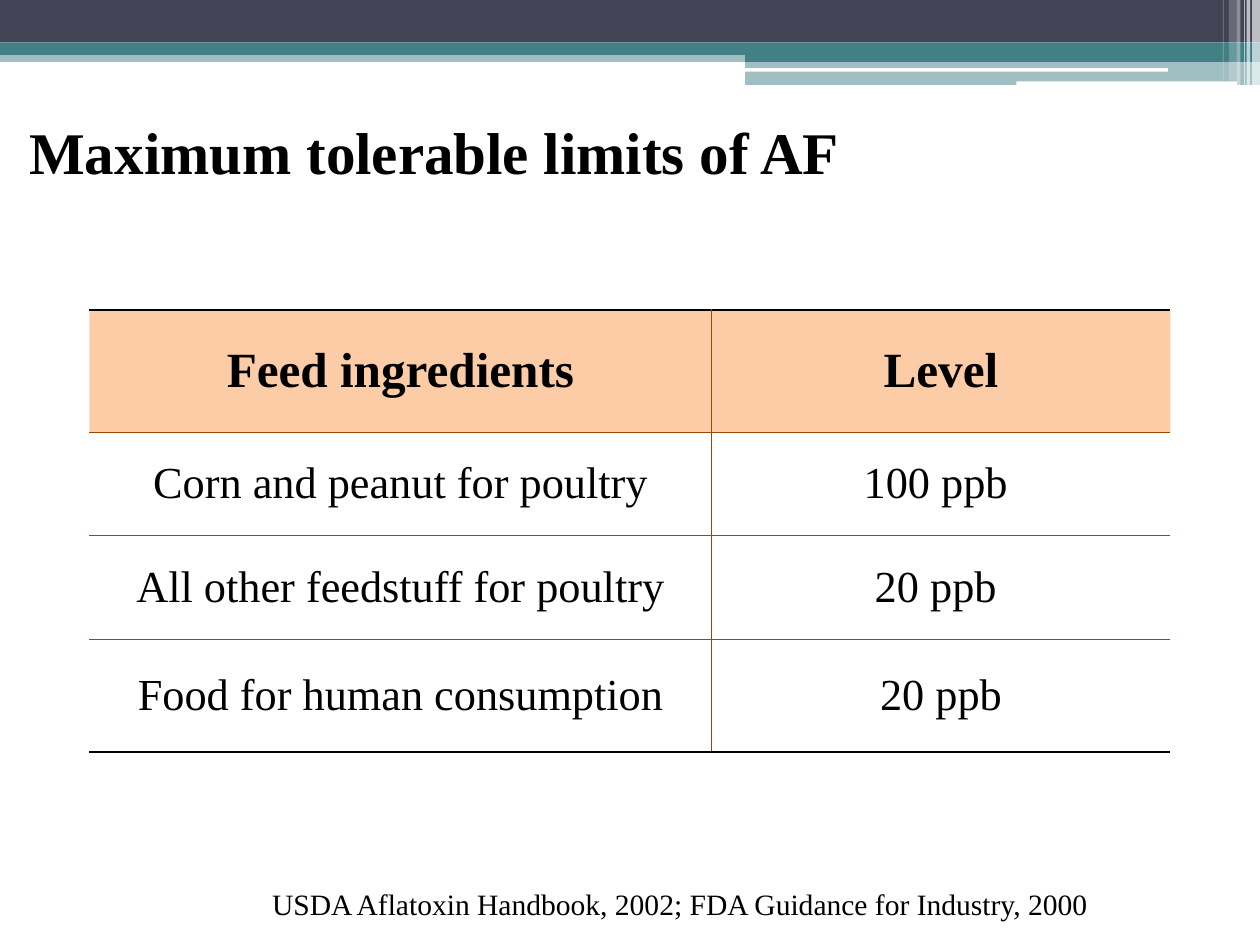
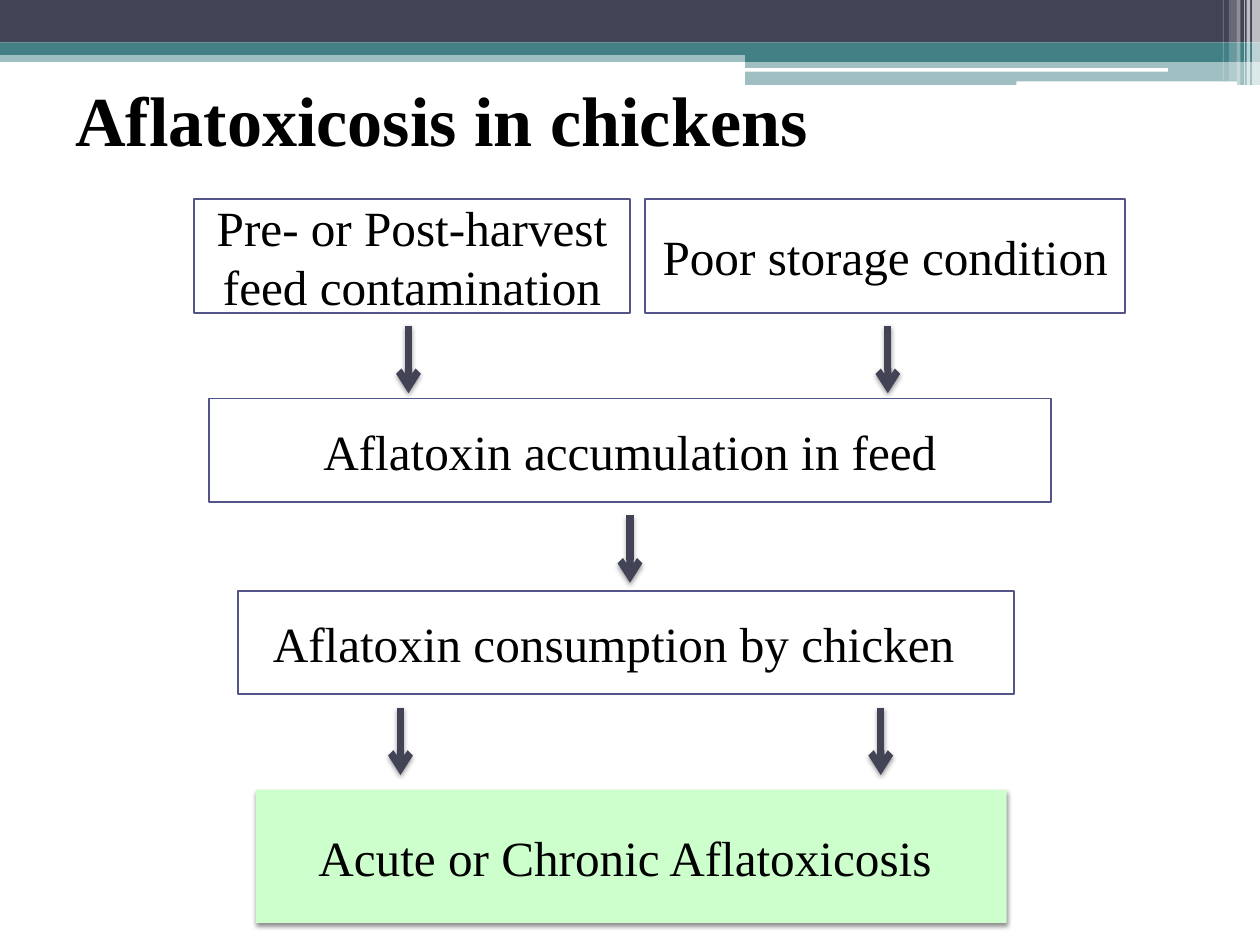
import pptx
import pptx.util
import pptx.dml.color
import pptx.enum.shapes
import pptx.enum.text
import pptx.oxml.ns
import lxml.etree

Inches = pptx.util.Inches
Pt = pptx.util.Pt
RGBColor = pptx.dml.color.RGBColor
Shape = pptx.enum.shapes.MSO_SHAPE
Align = pptx.enum.text.PP_ALIGN
qn = pptx.oxml.ns.qn

WIDTH, HEIGHT = 14.22, 10.67
FONT = "Times New Roman"
BLACK = RGBColor(0x00, 0x00, 0x00)
WHITE = RGBColor(0xFF, 0xFF, 0xFF)
SLATE = RGBColor(0x42, 0x44, 0x56)
TEAL = RGBColor(0x43, 0x80, 0x86)
INDIGO = RGBColor(0x53, 0x54, 0x8A)
MINT = RGBColor(0xCC, 0xFF, 0xCC)
PEACH = RGBColor(0xFA, 0xC0, 0x90)
BROWN = RGBColor(0x98, 0x48, 0x07)

SPLIT = 8.41
BANDS = [
    (0, 0.57, WIDTH, 0.13, TEAL, 50),
    (0, 0, WIDTH, 0.48, SLATE, 100),
    (0, 0.48, WIDTH, 0.14, TEAL, 100),
    (SPLIT, 0.56, WIDTH - SPLIT, 0.14, TEAL, 100),
    (SPLIT, 0.68, WIDTH - SPLIT, 0.28, TEAL, 50),
    (SPLIT, 0.77, 4.77, 0.04, WHITE, 100),
    (11.47, 0.92, 2.49, 0.06, WHITE, 100),
]
STRIPES = [
    (14.13, 0.09, 0.97, 65), (14.07, 0.04, 0.97, 65), (14.04, 0.01, 0.97, 60),
    (13.96, 0.04, 0.97, 40), (13.87, 0.09, 0.91, 20), (13.8, 0.01, 0.91, 30),
]
BANDS += [(left, 0, width, height, WHITE, opacity)
          for left, width, height, opacity in STRIPES]

LIMITS = [
    ("Feed ingredients", "Level"),
    ("Corn and peanut for poultry", "100 ppb"),
    ("All other feedstuff for poultry", "20 ppb"),
    ("Food for human consumption", "20 ppb"),
]
COLUMN_WIDTHS = [7.02, 5.18]
ROW_HEIGHTS = [1.38, 1.17, 1.17, 1.27]
LEVEL_SHIFTS = [0, 0.12, 0.12, 0]
SOURCES = "USDA Aflatoxin Handbook, 2002; FDA Guidance for Industry, 2000"

STAGES = [
    {"top": 2.25, "height": 1.28, "arrows": [4.61, 10.02],
     "boxes": [("Pre- or Post-harvest feed contamination", 2.19, 4.92, 0),
               ("Poor storage condition", 7.28, 5.42, 0)]},
    {"top": 4.5, "height": 1.17, "arrows": [7.11],
     "boxes": [("Aflatoxin accumulation in feed", 2.36, 9.5, 0)]},
    {"top": 6.67, "height": 1.17, "arrows": [4.52, 9.94],
     "boxes": [("Aflatoxin consumption by chicken", 2.69, 8.75, 0.28)]},
    {"top": 8.92, "height": 1.5, "arrows": [],
     "boxes": [("Acute or Chronic Aflatoxicosis", 2.89, 8.47, 0.14)]},
]
ARROW_GAP, ARROW_LENGTH = 0.15, 0.76


def place(left, top, width, height):
    return [Inches(value) for value in (left, top, width, height)]


def write_text(frame, text, size=40, bold=False, align=Align.CENTER):
    paragraph = frame.paragraphs[0]
    paragraph.alignment = align
    run = paragraph.add_run()
    run.text = text
    run.font.name = FONT
    run.font.size = Pt(size)
    run.font.bold = bold
    run.font.color.rgb = BLACK
    return run


def set_frame(frame, horizontal, vertical, shift=0):
    frame.word_wrap = True
    frame.auto_size = pptx.enum.text.MSO_AUTO_SIZE.NONE
    frame.vertical_anchor = pptx.enum.text.MSO_ANCHOR.MIDDLE
    frame.margin_left = Inches(horizontal)
    frame.margin_right = Inches(horizontal + shift)
    frame.margin_top = frame.margin_bottom = Inches(vertical)


def set_fill(fill, element, color, opacity=100):
    fill.solid()
    fill.fore_color.rgb = color
    if opacity < 100:
        tint = element.find(qn("a:solidFill")).find(qn("a:srgbClr"))
        lxml.etree.SubElement(tint, qn("a:alpha"), val=str(opacity * 1000))


def make_shadow(opacity, blur, distance, direction):
    effects = lxml.etree.Element(qn("a:effectLst"))
    shadow = lxml.etree.SubElement(
        effects, qn("a:outerShdw"), blurRad=str(Pt(blur)), dist=str(Pt(distance)),
        dir=str(direction * 60000), algn="ctr", rotWithShape="0")
    tint = lxml.etree.SubElement(shadow, qn("a:srgbClr"), val=str(BLACK))
    lxml.etree.SubElement(tint, qn("a:alpha"), val=str(opacity * 1000))
    return effects


def add_box(slide, bounds, fill, opacity=100, line=None):
    shape = slide.shapes.add_shape(Shape.RECTANGLE, *place(*bounds))
    shape.shadow.inherit = False
    set_fill(shape.fill, shape.element.spPr, fill, opacity)
    if line is None:
        shape.line.fill.background()
    else:
        shape.line.color.rgb = line
        shape.line.width = Pt(1.5)
    return shape


def add_arrow(slide, x, top):
    arrow = slide.shapes.add_connector(
        pptx.enum.shapes.MSO_CONNECTOR.STRAIGHT,
        *place(x, top, x, top + ARROW_LENGTH))
    arrow.line.color.rgb = SLATE
    arrow.line.width = Pt(5.75)
    properties = arrow.element.spPr
    lxml.etree.SubElement(properties.find(qn("a:ln")), qn("a:tailEnd"), type="arrow")
    properties.append(make_shadow(40, 4.1, 2, 90))


def add_bands(presentation, slide):
    master_tree = presentation.slide_master.shapes.element
    for *bounds, color, opacity in BANDS:
        master_tree.append(add_box(slide, bounds, color, opacity).element)


def add_title(slide, text, bounds, size):
    title = slide.shapes.title
    title.left, title.top, title.width, title.height = place(*bounds)
    set_frame(title.text_frame, 0.14, 0.07)
    return write_text(title.text_frame, text, size=size, bold=True, align=Align.LEFT)


def set_borders(cell, borders):
    properties = cell._tc.get_or_add_tcPr()
    for index, (side, border) in enumerate(zip("LRTB", borders)):
        line = lxml.etree.Element(qn("a:ln" + side))
        if border is None:
            lxml.etree.SubElement(line, qn("a:noFill"))
        else:
            color, width = border
            line.set("w", str(Pt(width)))
            fill = lxml.etree.SubElement(line, qn("a:solidFill"))
            lxml.etree.SubElement(fill, qn("a:srgbClr"), val=str(color))
        properties.insert(index, line)


def add_limits_table(slide):
    table = slide.shapes.add_table(
        len(LIMITS), len(COLUMN_WIDTHS),
        *place(1.01, 3.5, sum(COLUMN_WIDTHS), sum(ROW_HEIGHTS))).table
    table.first_row = table.horz_banding = False
    for column, width in zip(table.columns, COLUMN_WIDTHS):
        column.width = Inches(width)
    thin, thick = (BROWN, 1), (BLACK, 2.25)
    last = len(LIMITS) - 1
    for row, texts in enumerate(LIMITS):
        table.rows[row].height = Inches(ROW_HEIGHTS[row])
        header = row == 0
        for column, text in enumerate(texts):
            cell = table.cell(row, column)
            cell.vertical_anchor = pptx.enum.text.MSO_ANCHOR.MIDDLE
            cell.margin_left = cell.margin_top = cell.margin_bottom = Inches(0.06)
            cell.margin_right = Inches(0.06 + column * LEVEL_SHIFTS[row])
            write_text(cell.text_frame, text, size=40 if header else 36, bold=header)
            set_fill(cell.fill, cell._tc.get_or_add_tcPr(), PEACH if header else WHITE, 80)
            set_borders(cell, (thin if column else None, None if column else thin,
                               thick if header else thin,
                               thick if row == last else thin))


def build_limits(slide):
    run = add_title(slide, "Maximum tolerable limits of AF", (0.19, 0.83, 13.86, 1.75), 48)
    properties = run.font._element
    properties.find(qn("a:solidFill")).addnext(make_shadow(45, 4, 3, 45))
    add_limits_table(slide)
    sources = slide.shapes.add_textbox(*place(3.07, 9.98, 9.48, 0.44))
    set_frame(sources.text_frame, 0, 0)
    write_text(sources.text_frame, SOURCES, size=24, align=Align.LEFT)


def build_flow(slide):
    add_title(slide, "Aflatoxicosis in chickens", (0.71, 0.51, 12.8, 1.66), 57)
    for stage in STAGES:
        top, height = stage["top"], stage["height"]
        outcome = stage is STAGES[-1]
        for text, left, width, shift in stage["boxes"]:
            box = add_box(slide, (left, top, width, height),
                          MINT if outcome else WHITE, line=None if outcome else INDIGO)
            if outcome:
                properties = box.element.spPr
                properties.replace(properties.find(qn("a:effectLst")),
                                   make_shadow(45, 4, 2, 90))
            set_frame(box.text_frame, 0.1, 0.05, shift)
            write_text(box.text_frame, text)
        for x in stage["arrows"]:
            add_arrow(slide, x, top + height + ARROW_GAP)


def main():
    presentation = pptx.Presentation()
    presentation.slide_width, presentation.slide_height = Inches(WIDTH), Inches(HEIGHT)
    layout = presentation.slide_layouts.get_by_name("Title Only")
    limits, flow = [presentation.slides.add_slide(layout) for _ in range(2)]
    add_bands(presentation, limits)
    build_limits(limits)
    build_flow(flow)
    presentation.save("out.pptx")


if __name__ == "__main__":
    main()
